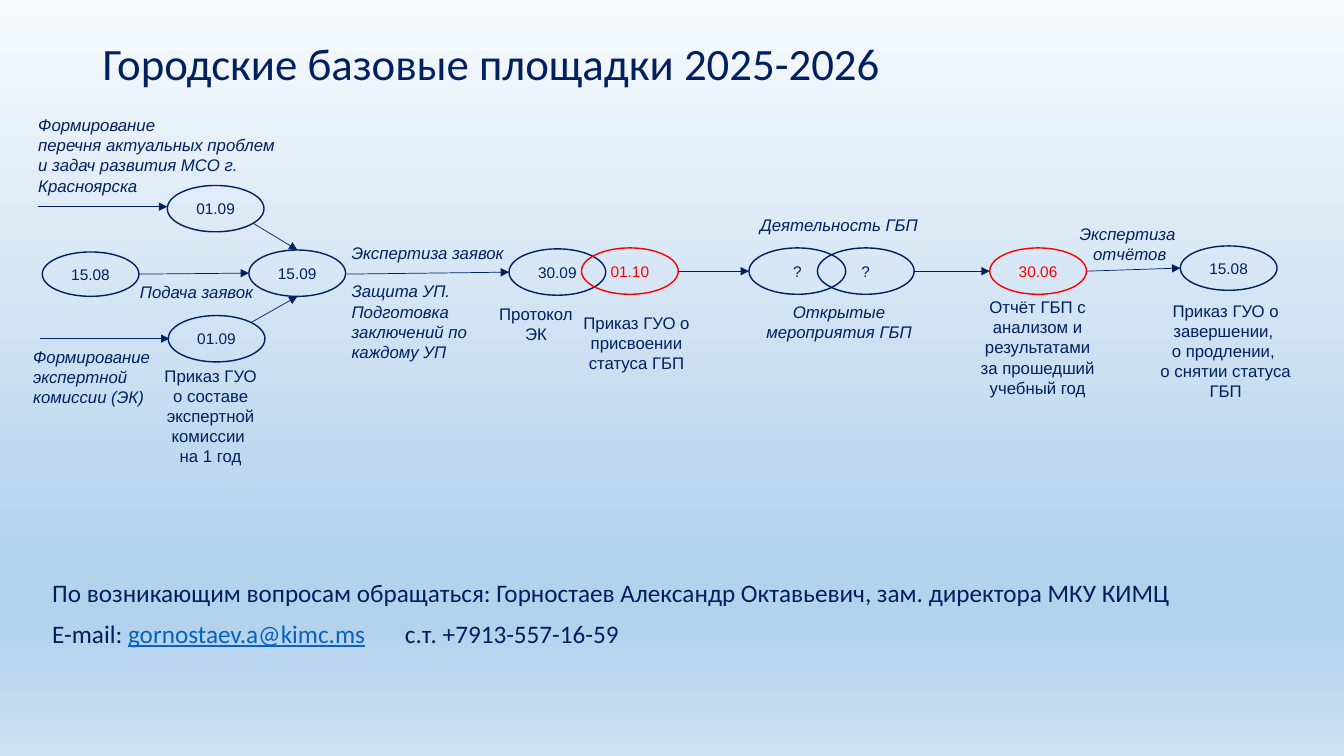
import copy

import pptx
import pptx.dml.color
import pptx.enum.shapes
import pptx.enum.text
import pptx.util
from lxml import etree
from pptx.oxml.ns import qn

Pt = pptx.util.Pt
RGB = pptx.dml.color.RGBColor
Align = pptx.enum.text.PP_ALIGN
Anchor = pptx.enum.text.MSO_ANCHOR

NAVY = RGB(0x00, 0x20, 0x60)
RED = RGB(0xFF, 0x00, 0x00)
BLUE = RGB(0x05, 0x63, 0xC1)
SKY = [(0, "F7FAFD"), (74, "B5D2EC"), (83, "B5D2EC"), (100, "CEE1F2")]
OVAL_W, OVAL_H = 69.1, 33.1


class Board:
    def __init__(self, slide):
        self.slide = slide
        self.shapes = slide.shapes

    def style(self, para, size, face="Arial", color=NAVY, slant=False):
        font = para.font
        font.name, font.size, font.italic = face, Pt(size), slant
        font.color.rgb = color

    def sky(self, stops):
        """Fill the background with a top-down gradient."""
        fill = self.slide.background.fill
        fill.gradient()
        fill.gradient_angle = 270
        group = self.slide.element.xpath(".//p:bg//a:gsLst")[0]
        model = copy.deepcopy(group[0])
        for old in list(group):
            group.remove(old)
        for place, shade in stops:
            stop = copy.deepcopy(model)
            stop.set("pos", str(place * 1000))
            for old in list(stop):
                stop.remove(old)
            etree.SubElement(stop, qn("a:srgbClr"), val=shade)
            group.append(stop)

    def title(self, text, x, y, w, h):
        box = self.shapes.title
        box.left, box.top, box.width, box.height = map(Pt, (x, y, w, h))
        frame = box.text_frame
        frame.text = text
        frame.auto_size = pptx.enum.text.MSO_AUTO_SIZE.NONE
        frame.vertical_anchor = Anchor.MIDDLE
        para = frame.paragraphs[0]
        para.alignment, para.line_spacing = Align.LEFT, 0.9
        self.style(para, 32, "Calibri")

    def oval(self, text, x, y, color=NAVY, h=OVAL_H):
        oval = self.shapes.add_shape(
            pptx.enum.shapes.MSO_SHAPE.OVAL, Pt(x), Pt(y), Pt(OVAL_W), Pt(h))
        oval.shadow.inherit = False
        oval.fill.background()
        oval.line.color.rgb, oval.line.width = color, Pt(1)
        frame = oval.text_frame
        frame.text = text
        frame.vertical_anchor = Anchor.MIDDLE
        para = frame.paragraphs[0]
        para.alignment = Align.CENTER
        self.style(para, 11, color=color)

    def arrow(self, x1, y1, x2, y2):
        line = self.shapes.add_connector(
            pptx.enum.shapes.MSO_CONNECTOR.STRAIGHT, Pt(x1), Pt(y1), Pt(x2), Pt(y2))
        line.line.color.rgb, line.line.width = NAVY, Pt(0.5)
        props = line.element.spPr
        etree.SubElement(props.find(qn("a:ln")), qn("a:tailEnd"), type="triangle")
        etree.SubElement(props, qn("a:effectLst"))

    def frame(self, x, y, w, h):
        frame = self.shapes.add_textbox(Pt(x), Pt(y), Pt(w), Pt(h)).text_frame
        frame.word_wrap = True
        return frame

    def label(self, text, x, y, w, h, align, slant):
        """Add a caption; upright ones are centred vertically."""
        frame = self.frame(x, y, w, h)
        frame.text = text
        frame.vertical_anchor = Anchor.TOP if slant else Anchor.MIDDLE
        for para in frame.paragraphs:
            para.alignment = align
            self.style(para, 12, slant=slant)

    def contact(self, lines, x, y, w, h):
        """Add lines made of (text, is_link) runs."""
        frame = self.frame(x, y, w, h)
        for i, parts in enumerate(lines):
            para = frame.add_paragraph() if i else frame.paragraphs[0]
            para.line_spacing, para.space_before = 0.9, Pt(10)
            self.style(para, 18, "Calibri")
            for text, link in parts:
                run = para.add_run()
                run.text = text
                if link:
                    run.font.underline = True
                    run.font.color.rgb = BLUE


OVALS = [
    ("15.08", 30.2, 180, NAVY, 31.7),
    ("15.09", 177.8, 178.6),
    ("01.09", 119.5, 132.5),
    ("01.09", 120.2, 225.4),
    ("30.09", 363.6, 177.8),
    ("01.10", 415.4, 177.1, RED),
    ("?", 535, 177.1),
    ("?", 583.9, 177.1),
    ("30.06", 707, 177.1, RED),
    ("15.08", 843.1, 175.7, NAVY, 31.7),
]
ARROWS = [
    (27.4, 147.6, 119.5, 147.6),
    (28.8, 241.9, 121, 241.9),
    (181.4, 159.8, 212.4, 178.6),
    (179.3, 230.4, 212.4, 211.7),
    (99.4, 195.8, 177.8, 195.1),
    (247.7, 195.8, 363.6, 194.4),
    (484.6, 193.7, 535, 193.7),
    (653, 193.7, 707, 193.7),
    (776.2, 193.7, 843.1, 191.5),
]
STAGES = [
    ("Формирование\vперечня актуальных проблем и задач развития МСО г. Красноярска",
     20.2, 78.5, 193, 67, Align.LEFT),
    ("Подача заявок", 92.9, 198, 116.6, 19.4, Align.LEFT),
    ("Формирование экспертной комиссии (ЭК)", 16.6, 244.1, 110.9, 49.7, Align.LEFT),
    ("Экспертиза заявок", 244.1, 169.9, 148.3, 24.5, Align.LEFT),
    ("Защита УП.\nПодготовка заключений по каждому УП",
     244.1, 197.3, 133.9, 61.2, Align.LEFT),
    ("Деятельность ГБП", 527, 149.8, 144.7, 21.6, Align.CENTER),
    ("Открытые мероприятия ГБП", 539.3, 211.7, 120.2, 47.5, Align.CENTER),
    ("Экспертиза\v отчётов", 758.2, 156.2, 94.3, 36.7, Align.CENTER),
]
PAPERS = [
    ("Приказ ГУО о составе экспертной комиссии \vна 1 год", 107.3, 258.5, 86.4, 77),
    ("Протокол \vЭК ", 342, 213.1, 85, 36),
    ("Приказ ГУО о присвоении статуса ГБП", 405.4, 212.4, 98.6, 64.8),
    ("Отчёт ГБП с анализом и результатами за прошедший учебный год",
     691.9, 202.3, 98.6, 91.4),
    ("Приказ ГУО о завершении, \vо продлении, \vо снятии статуса ГБП",
     820.1, 208.8, 110.9, 83.5),
]
CONTACT = [
    [("По возникающим вопросам обращаться: Горностаев Александр Октавьевич, "
      "зам. директора МКУ КИМЦ", False)],
    [("E-mail: ", False), ("gornostaev.a@kimc.ms", True),
     ("\tс.т. +7913-557-16-59", False)],
]


def main():
    deck = pptx.Presentation()
    deck.slide_width, deck.slide_height = Pt(960), Pt(540)
    board = Board(deck.slides.add_slide(deck.slide_layouts[5]))
    board.sky(SKY)
    board.title("Городские базовые площадки 2025-2026", 66.2, 28.8, 828, 37.4)
    for oval in OVALS:
        board.oval(*oval)
    for arrow in ARROWS:
        board.arrow(*arrow)
    for stage in STAGES:
        board.label(*stage, slant=True)
    for paper in PAPERS:
        board.label(*paper, Align.CENTER, slant=False)
    board.contact(CONTACT, 30.2, 411.1, 901.4, 77)
    deck.save("out.pptx")


if __name__ == "__main__":
    main()
